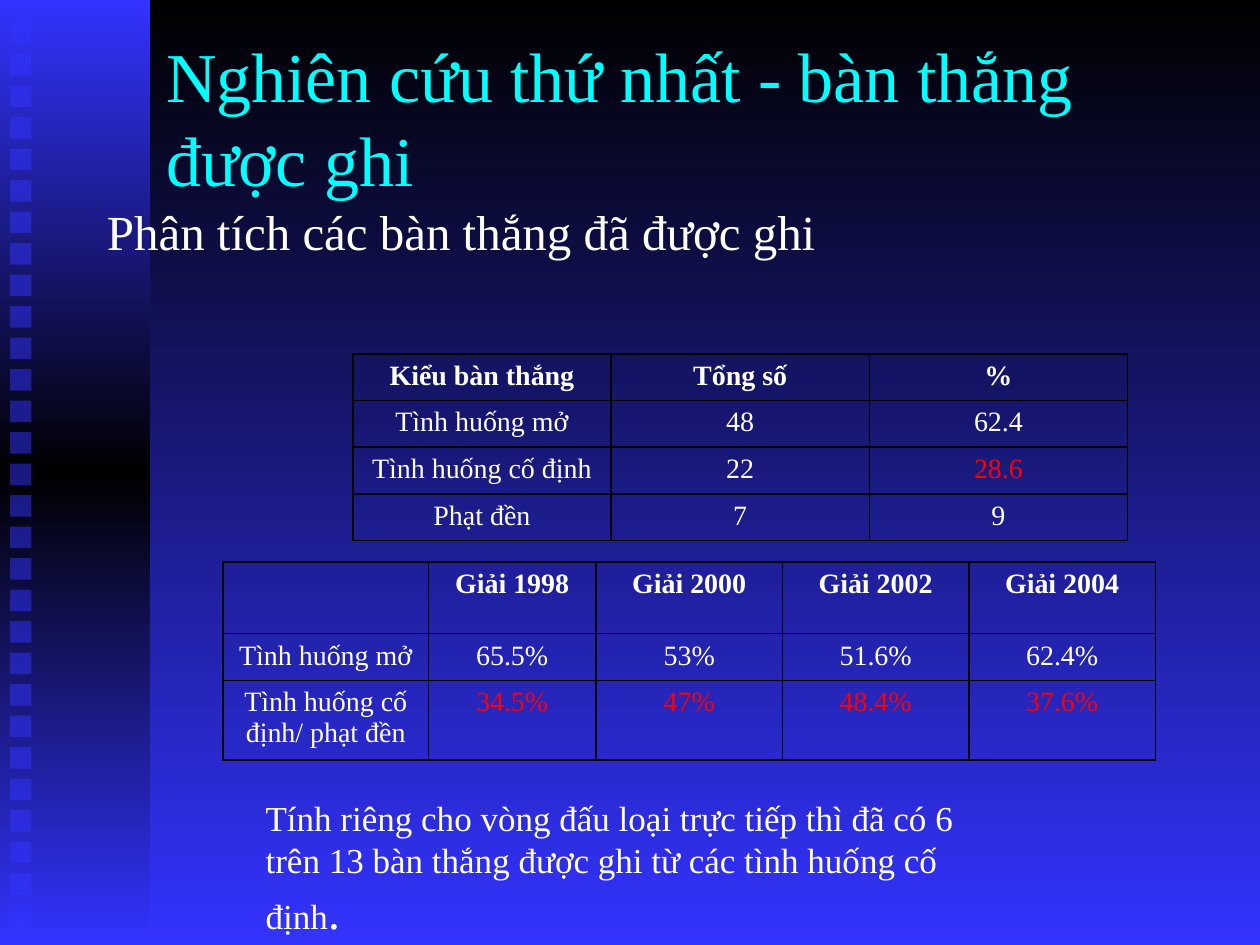
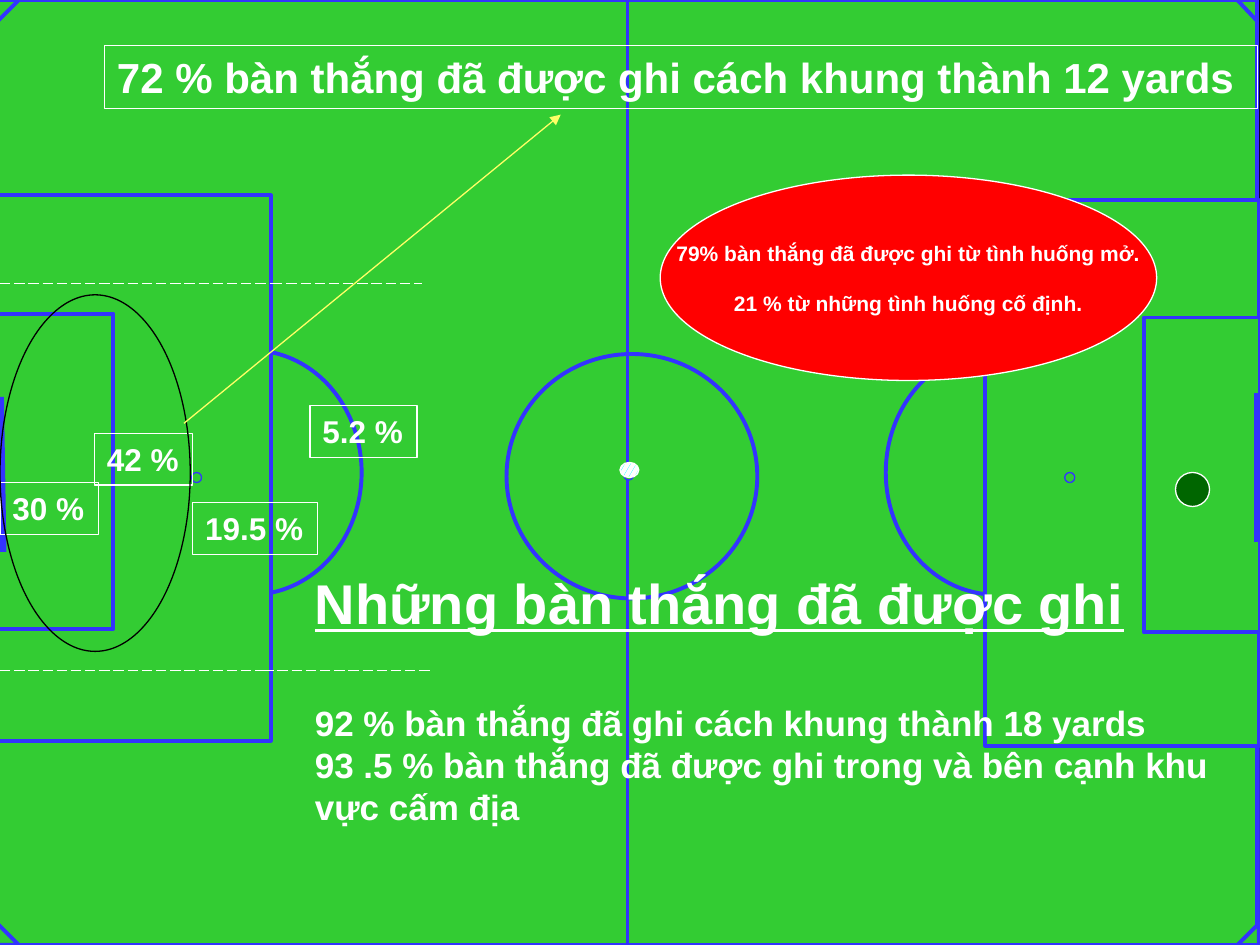
from dataclasses import dataclass
from typing import NamedTuple

from lxml import etree
from pptx import Presentation
from pptx.dml.color import RGBColor
from pptx.enum.dml import MSO_LINE, MSO_PATTERN
from pptx.enum.shapes import MSO_CONNECTOR, MSO_SHAPE
from pptx.enum.text import MSO_ANCHOR, PP_ALIGN
from pptx.oxml.ns import qn
from pptx.util import Inches, Pt

RECT, OVAL, CORNER = MSO_SHAPE.RECTANGLE, MSO_SHAPE.OVAL, MSO_SHAPE.RIGHT_TRIANGLE
STRAIGHT = MSO_CONNECTOR.STRAIGHT
LONG_DASH = MSO_LINE.LONG_DASH
CONFETTI = MSO_PATTERN.LARGE_CONFETTI
LEFT, CENTER = PP_ALIGN.LEFT, PP_ALIGN.CENTER
TOP, MIDDLE = MSO_ANCHOR.TOP, MSO_ANCHOR.MIDDLE

SERIF, SANS = "Times New Roman", "Arial"
BLACK, WHITE, BLUE, CYAN = "000000", "FFFFFF", "3333FF", "00FFFF"
RED, GRASS, DARK_GREEN, YELLOW = "FF0000", "33CC33", "006600", "FFFF66"


class Box(NamedTuple):
    left: float
    top: float
    width: float
    height: float

    def lengths(self):
        return [Inches(value) for value in self]


@dataclass
class Run:
    text: str
    size: float
    font: str = SERIF
    color: str = WHITE
    bold: bool = False
    underline: bool = False


@dataclass
class Para:
    runs: list
    align: int = LEFT
    before: float = 0


@dataclass
class Figure:
    kind: int
    box: Box
    fill: str | None = GRASS
    line: str | None = BLUE
    width: float = 2.25
    rotation: float = 0


@dataclass
class Stroke:
    start: tuple
    end: tuple
    color: str = BLUE
    width: float = 2.25
    dash: int | None = None
    arrow: bool = False


@dataclass
class Grid:
    left: float
    top: float
    columns: list
    rows: list
    cells: list
    red_cells: set


def rgb(color: str) -> RGBColor:
    return RGBColor.from_string(color)


def set_gradient(fill, owner, colors: list) -> None:
    """Vertical gradient with evenly spaced colours."""
    fill.gradient()
    fill.gradient_angle = 270
    stops = next(owner.iter(qn("a:gsLst")))
    for stop in list(stops):
        stops.remove(stop)
    for i, color in enumerate(colors):
        position = str(100000 * i // (len(colors) - 1))
        stop = etree.SubElement(stops, qn("a:gs"), pos=position)
        etree.SubElement(stop, qn("a:srgbClr"), val=color)


def write(frame, paras: list, wrap: bool = True, anchor: int = TOP) -> None:
    frame.word_wrap = wrap
    frame.vertical_anchor = anchor
    for i, para in enumerate(paras):
        target = frame.paragraphs[0] if i == 0 else frame.add_paragraph()
        target.alignment = para.align
        if para.before:
            target.space_before = Pt(para.before)
        for item in para.runs:
            run = target.add_run()
            run.text = item.text
            font = run.font
            font.name, font.size = item.font, Pt(item.size)
            font.bold, font.underline = item.bold, item.underline
            font.color.rgb = rgb(item.color)


def add_text(slide, box: Box, paras: list, wrap: bool = True):
    textbox = slide.shapes.add_textbox(*box.lengths())
    write(textbox.text_frame, paras, wrap)
    return textbox


def add_framed(slide, box: Box, text: str, size: float) -> None:
    label = add_text(slide, box, [Para([Run(text, size, SANS, bold=True)])], wrap=False)
    label.line.color.rgb = rgb(WHITE)
    label.line.width = Pt(0.75)


def add_figure(slide, figure: Figure):
    shape = slide.shapes.add_shape(figure.kind, *figure.box.lengths())
    shape.shadow.inherit = False
    shape.rotation = figure.rotation
    if figure.fill:
        shape.fill.solid()
        shape.fill.fore_color.rgb = rgb(figure.fill)
    else:
        shape.fill.background()
    if figure.line:
        shape.line.color.rgb = rgb(figure.line)
        shape.line.width = Pt(figure.width)
    else:
        shape.line.fill.background()
    return shape


def add_stroke(slide, stroke: Stroke) -> None:
    ends = [Inches(value) for value in (*stroke.start, *stroke.end)]
    connector = slide.shapes.add_connector(STRAIGHT, *ends)
    connector.line.color.rgb = rgb(stroke.color)
    connector.line.width = Pt(stroke.width)
    if stroke.dash:
        connector.line.dash_style = stroke.dash
    properties = connector._element.spPr
    if stroke.arrow:
        etree.SubElement(properties.find(qn("a:ln")), qn("a:tailEnd"), type="triangle")
    etree.SubElement(properties, qn("a:effectLst"))


def add_borders(cell) -> None:
    properties = cell._tc.get_or_add_tcPr()
    for side in ("lnL", "lnR", "lnT", "lnB"):
        border = etree.SubElement(properties, qn(f"a:{side}"), w=str(Pt(1)))
        fill = etree.SubElement(border, qn("a:solidFill"))
        etree.SubElement(fill, qn("a:srgbClr"), val=BLACK)


def add_grid(slide, grid: Grid) -> None:
    box = Box(grid.left, grid.top, sum(grid.columns), sum(grid.rows))
    table = slide.shapes.add_table(len(grid.rows), len(grid.columns), *box.lengths()).table
    table.first_row = table.horz_banding = False
    for column, width in zip(table.columns, grid.columns):
        column.width = Inches(width)
    for row, height in zip(table.rows, grid.rows):
        row.height = Inches(height)
    for r, texts in enumerate(grid.cells):
        for c, text in enumerate(texts):
            cell = table.cell(r, c)
            add_borders(cell)
            cell.fill.background()
            if text:
                color = RED if (r, c) in grid.red_cells else WHITE
                write(cell.text_frame, [Para([Run(text, 16, color=color, bold=r == 0)], CENTER)])


def new_slide(deck):
    slide = deck.slides.add_slide(deck.slide_layouts[6])
    set_gradient(slide.background.fill, slide._element, [BLACK, BLUE])
    return slide


def add_side_band(slide) -> None:
    band = add_figure(slide, Figure(RECT, Box(0, 0, 1.19, 7.5), line=None))
    set_gradient(band.fill, band._element, [BLUE, BLACK, BLUE])
    for i in range(29):
        square = add_figure(slide, Figure(RECT, Box(0.08, 0.18 + 0.25 * i, 0.17, 0.17), BLUE, None))
        color = next(square._element.spPr.iter(qn("a:srgbClr")))
        etree.SubElement(color, qn("a:alpha"), val="50000")


GOAL_TYPES = Grid(2.8, 2.81, [2.05] * 3, [0.37] * 4, [
    ["Kiểu bàn thắng", "Tổng số", "%"],
    ["Tình huống mở", "48", "62.4"],
    ["Tình huống cố định", "22", "28.6"],
    ["Phạt đền", "7", "9"],
], {(2, 2)})

TOURNAMENTS = Grid(1.77, 4.46, [1.63, 1.33, 1.48, 1.48, 1.48], [0.57, 0.37, 0.63], [
    ["", "Giải 1998", "Giải 2000", "Giải 2002", "Giải 2004"],
    ["Tình huống mở", "65.5%", "53%", "51.6%", "62.4%"],
    ["Tình huống cố định/ phạt đền", "34.5%", "47%", "48.4%", "37.6%"],
], {(2, c) for c in range(1, 5)})

# Football pitch, from back to front
PITCH = [
    Figure(RECT, Box(-0.02, 0, 10, 7.5)),
    Figure(OVAL, Box(4.02, 2.81, 1.99, 1.94)),
    Stroke((4.98, 0), (4.98, 7.5)),
    *[Figure(OVAL, Box(x, 2.78, 1.75, 1.94)) for x in (1.12, 7.03)],
    *[Figure(RECT, Box(x, y, 2.17, 4.33)) for x, y in ((-0.02, 1.55), (7.82, 1.59))],
    *[Figure(RECT, Box(x, y, 0.92, 2.5)) for x, y in ((-0.02, 2.49), (9.08, 2.52))],
    *[Figure(CORNER, Box(x, 7.33, 0.17, 0.17), rotation=turn) for x, turn in ((-0.02, 0), (9.82, 270))],
    Stroke((9.82, 0), (9.98, 0.17)),
    Stroke((0.15, 0), (-0.02, 0.17)),
    *[Figure(OVAL, Box(x, y, 0.08, 0.08), width=0.75)
      for x, y in ((1.52, 3.75), (8.45, 3.75), (4.95, 3.73))],
    Stroke((9.98, 3.12), (9.98, 4.3), width=4.5),
    Stroke((0, 3.15), (0.02, 4.38), width=4.5),
]

# Share of goals by zone
ZONE_SHARES = [
    (Box(0, 3.83, 0.78, 0.41), "30 %"),
    (Box(2.46, 3.22, 0.85, 0.41), "5.2 %"),
    (Box(0.75, 3.44, 0.78, 0.41), "42 %"),
    (Box(1.53, 3.99, 0.99, 0.41), "19.5 %"),
]


def draw(slide, items: list) -> None:
    for item in items:
        if isinstance(item, Stroke):
            add_stroke(slide, item)
        else:
            add_figure(slide, item)


def dashed(x1: float, x2: float, y: float) -> Stroke:
    return Stroke((x1, y), (x2, y), WHITE, 0.75, LONG_DASH)


def build_goal_study(deck) -> None:
    slide = new_slide(deck)
    add_side_band(slide)
    add_text(slide, Box(1.22, 0.21, 8.27, 1.25),
             [Para([Run("Nghiên cứu thứ nhất - bàn thắng được ghi", 40, color=CYAN)])])
    add_text(slide, Box(0.75, 1.55, 7.32, 1.02), [Para([Run("Phân tích các bàn thắng đã được ghi", 28)])])
    add_grid(slide, GOAL_TYPES)
    add_grid(slide, TOURNAMENTS)
    knockout = ("Tính riêng cho vòng đấu loại trực tiếp thì đã có 6 trên 13 bàn thắng "
                "được ghi từ các tình huống cố định")
    add_text(slide, Box(2.01, 6.27, 6.14, 1.02), [Para([Run(knockout, 20), Run(".", 28)])])


def build_goal_map(deck) -> None:
    slide = new_slide(deck)
    draw(slide, PITCH)

    # Ball and goalkeeper
    ball = add_figure(slide, Figure(OVAL, Box(4.92, 3.67, 0.15, 0.12), WHITE, WHITE, 0.75))
    ball.fill.patterned()
    ball.fill.pattern = CONFETTI
    ball.fill.fore_color.rgb = rgb(CYAN)
    ball.fill.back_color.rgb = rgb(WHITE)
    draw(slide, [Figure(OVAL, Box(9.33, 3.75, 0.27, 0.27), DARK_GREEN, WHITE, 0.75),
                 dashed(0, 2.16, 2.25), dashed(0, 2.16, 5.32)])

    for box, share in ZONE_SHARES:
        add_framed(slide, box, share, 18)

    # Findings
    add_text(slide, Box(2.4, 4.46, 7.42, 2.19), [
        Para([Run("Những bàn thắng đã được ghi", 32, SANS, bold=True, underline=True)]),
        Para([Run("92 % bàn thắng đã ghi cách khung thành 18 yards", 20, SANS, bold=True)], before=38),
        Para([Run("93 .5 % bàn thắng đã được ghi trong và bên cạnh khu vực cấm địa", 20, SANS, bold=True)]),
    ])

    # Zone near goal and its headline
    draw(slide, [Figure(OVAL, Box(0, 2.34, 1.51, 2.83), None, BLACK, 0.75),
                 Stroke((1.46, 3.36), (4.45, 0.91), YELLOW, 0.75, arrow=True)])
    add_framed(slide, Box(0.83, 0.36, 9.15, 0.5), "72 % bàn thắng đã được ghi cách khung thành 12 yards", 24)
    draw(slide, [dashed(2.16, 3.35, 2.25), dashed(2.09, 3.43, 5.32)])

    # Open play against set pieces
    callout = add_figure(slide, Figure(OVAL, Box(5.24, 1.39, 3.94, 1.63), RED, WHITE, 0.75))
    write(callout.text_frame, [
        Para([Run("79% bàn thắng đã được ghi từ tình huống mở.", 12, SANS, bold=True)], CENTER),
        Para([Run("21 % từ những tình huống cố định.", 12, SANS, bold=True)], CENTER, before=14),
    ], wrap=False, anchor=MIDDLE)


def main() -> None:
    deck = Presentation()
    deck.slide_width, deck.slide_height = Inches(10), Inches(7.5)
    build_goal_study(deck)
    build_goal_map(deck)
    deck.save("out.pptx")


if __name__ == "__main__":
    main()
